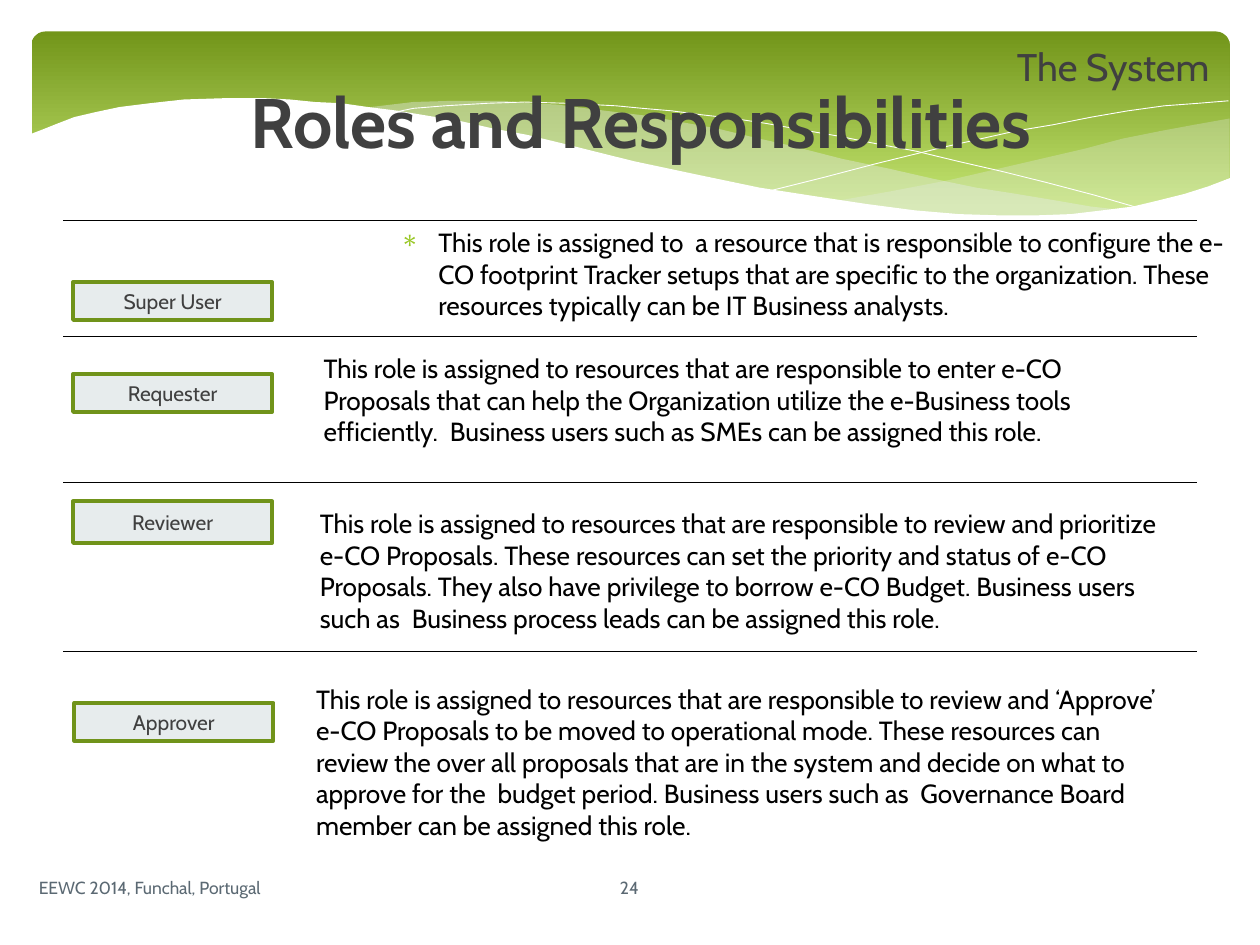
from dataclasses import dataclass

from lxml import etree
from pptx import Presentation
from pptx.dml.color import RGBColor
from pptx.enum.shapes import MSO_CONNECTOR, MSO_SHAPE
from pptx.enum.text import MSO_ANCHOR, PP_ALIGN
from pptx.oxml.ns import qn
from pptx.util import Inches, Pt

STRAIGHT = MSO_CONNECTOR.STRAIGHT
RECT, ROUNDED = MSO_SHAPE.RECTANGLE, MSO_SHAPE.ROUNDED_RECTANGLE
TOP, MIDDLE, BOTTOM = MSO_ANCHOR.TOP, MSO_ANCHOR.MIDDLE, MSO_ANCHOR.BOTTOM
LEFT, CENTER = PP_ALIGN.LEFT, PP_ALIGN.CENTER
FONT = "Cabin"
COLORS = {
    "band_top": "72951A", "band_bottom": "C5E672", "mist": "E7ECED",
    "white": "FFFFFF", "black": "000000", "dark": "404040",
    "border": "70931A", "footer": "5B6973", "bullet": "98C723",
}
Points = list[tuple[float, float]]


@dataclass
class Label:
    text: str
    box: tuple[float, float, float, float]
    size: int
    color: str = "dark"
    align: PP_ALIGN = CENTER
    anchor: MSO_ANCHOR = MIDDLE
    bold: bool = False


@dataclass
class Role:
    name: str
    box: tuple[float, float, float, float]
    text: str
    text_box: tuple[float, float, float, float]
    bulleted: bool = False


@dataclass
class Wave:
    points: Points
    fill: str | None = None
    alpha: int = 100


RIGHT_WAVE: Points = [
    (9.76, 0.94), (9.48, 0.99), (9.21, 1.04), (8.91, 1.1), (8.61, 1.18),
    (8.05, 1.31), (7.53, 1.43), (7.06, 1.52), (6.61, 1.6), (6.91, 1.64),
    (7.19, 1.67), (7.45, 1.69), (7.69, 1.71), (7.92, 1.72), (8.24, 1.72),
    (8.54, 1.7), (8.81, 1.67), (9.05, 1.63), (9.28, 1.58), (9.49, 1.52),
    (9.76, 1.41),
]
MIDDLE_WAVE: Points = [
    (8.93, 1.67), (8.66, 1.64), (8.37, 1.59), (8.07, 1.54), (7.75, 1.49),
    (7.41, 1.42), (7.06, 1.34), (6.68, 1.26), (6.29, 1.16), (5.98, 1.09),
    (5.69, 1.02), (5.41, 0.97), (5.14, 0.92), (4.89, 0.89), (4.65, 0.86),
    (4.42, 0.83), (4.2, 0.82), (3.99, 0.8), (3.61, 0.8), (3.28, 0.81),
    (2.86, 0.86), (3.23, 0.9), (3.62, 0.97), (4.04, 1.06), (4.49, 1.16),
    (4.91, 1.26), (5.3, 1.35), (5.66, 1.43), (6.01, 1.5), (6.34, 1.56),
    (6.65, 1.61), (6.95, 1.65), (7.22, 1.68), (7.48, 1.7), (7.73, 1.72),
    (7.96, 1.73), (8.28, 1.73), (8.57, 1.71), (8.76, 1.69),
]
FALLING_LINE: Points = [
    (3.09, 0.9), (3.28, 0.86), (3.53, 0.84), (3.87, 0.82), (4.16, 0.81),
    (4.5, 0.82), (4.89, 0.84), (5.1, 0.86), (5.33, 0.88), (5.56, 0.91),
    (5.82, 0.94), (6.08, 0.98), (6.36, 1.03), (6.65, 1.08), (6.95, 1.14),
    (7.27, 1.2), (7.6, 1.28), (7.95, 1.36), (8.31, 1.45), (8.69, 1.55),
    (9.07, 1.66),
]
RISING_LINE: Points = [
    (6.13, 1.51), (6.53, 1.41), (6.95, 1.3), (7.48, 1.17), (8.06, 1.04),
    (8.36, 0.99), (8.66, 0.93), (8.95, 0.88), (9.24, 0.84), (9.51, 0.82),
    (9.75, 0.8),
]
LOWER_EDGE: Points = [
    (9.77, 1.41), (9.59, 1.48), (9.4, 1.54), (9.2, 1.59), (8.99, 1.64),
    (8.75, 1.67), (8.5, 1.7), (8.23, 1.71), (7.93, 1.71), (7.61, 1.7),
    (7.26, 1.67), (6.88, 1.62), (6.48, 1.56), (6.03, 1.49), (5.55, 1.39),
    (5.03, 1.28), (4.47, 1.14), (4.18, 1.07), (3.91, 1.02), (3.65, 0.96),
    (3.4, 0.92), (3.16, 0.88), (2.92, 0.85), (2.71, 0.82), (2.5, 0.81),
    (2.3, 0.79), (2.11, 0.78), (1.77, 0.78), (1.46, 0.79), (1.19, 0.82),
    (0.95, 0.85), (0.76, 0.89), (0.59, 0.93), (0.46, 0.98), (0.36, 1.02),
    (0.23, 1.07), (0.23, 2.24), (9.77, 2.24),
]
WAVES = [
    Wave(RIGHT_WAVE, "mist", 29), Wave(MIDDLE_WAVE, "mist", 40),
    Wave(FALLING_LINE), Wave(RISING_LINE), Wave(LOWER_EDGE, "white"),
]
DIVIDERS = [1.75, 2.67, 3.83, 5.17]
LABELS = [
    Label("Roles and Responsibilities", (1.25, 0.67, 7.68, 0.67), 40, anchor=BOTTOM, bold=True),
    Label("The System", (7.92, 0.33, 1.83, 0.39), 22),
    Label("EEWC 2014, Funchal, Portugal", (0.21, 6.84, 4.14, 0.4), 10, "footer", LEFT),
    Label("24", (4.36, 6.84, 1.27, 0.4), 10, "footer"),
]
ROLES = [
    Role("Super User", (0.58, 2.24, 1.58, 0.3),
         "This role is assigned to  a resource that is responsible to configure the e-CO footprint "
         "Tracker setups that are specific to the organization. These resources typically can be "
         "IT Business analysts.", (3.08, 1.75, 6.92, 0.92), True),
    Role("Requester", (0.58, 2.97, 1.58, 0.3),
         "This role is assigned to resources that are responsible to enter e-CO Proposals that can "
         "help the Organization utilize the e-Business tools efficiently.  Business users such as "
         "SMEs can be assigned this role.", (2.47, 2.75, 6.92, 1.08)),
    Role("Reviewer", (0.58, 3.98, 1.58, 0.33),
         "This role is assigned to resources that are responsible to review and prioritize e-CO "
         "Proposals. These resources can set the priority and status of e-CO Proposals. They also "
         "have privilege to borrow e-CO Budget. Business users such as  Business process leads can "
         "be assigned this role.", (2.44, 3.98, 6.92, 1.28)),
    Role("Approver", (0.59, 5.58, 1.58, 0.3),
         "This role is assigned to resources that are responsible to review and ‘Approve’ e-CO "
         "Proposals to be moved to operational mode. These resources can review the over all "
         "proposals that are in the system and decide on what to approve for the  budget period. "
         "Business users such as  Governance Board member can be assigned this role.",
         (2.41, 5.37, 6.92, 1.54)),
]


def rgb(name: str) -> RGBColor:
    return RGBColor.from_string(COLORS[name])


def write(sp, label: Label):
    tf = sp.text_frame
    tf.word_wrap = True
    tf.vertical_anchor = label.anchor
    tf.text = label.text
    p = tf.paragraphs[0]
    p.alignment = label.align
    font = p.runs[0].font
    font.name, font.size, font.bold = FONT, Pt(label.size), label.bold
    font.color.rgb = rgb(label.color)
    return p


def add_label(s, label: Label):
    return write(s.shapes.add_textbox(*map(Inches, label.box)), label)


def add_band(s) -> None:
    sp = s.shapes.add_shape(ROUNDED, Inches(0.25), Inches(0.25), Inches(9.51), Inches(1.56))
    sp.adjustments[0] = 0.07
    sp.shadow.inherit = False
    sp.line.fill.background()
    sp.fill.gradient()
    sp.fill.gradient_angle = 270
    for stop, color, position in zip(sp.fill.gradient_stops, ("band_top", "band_bottom"), (0, 0.9)):
        stop.color.rgb = rgb(color)
        stop.position = position


def add_wave(s, wave: Wave) -> None:
    points = [(Inches(x), Inches(y)) for x, y in wave.points]
    builder = s.shapes.build_freeform(*points[0])
    builder.add_line_segments(points[1:], close=wave.fill is not None)
    sp = builder.convert_to_shape()
    sp.shadow.inherit = False
    if wave.fill is None:
        sp.fill.background()
        sp.line.color.rgb = rgb("white")
        sp.line.width = Pt(0.5)
        return
    sp.line.fill.background()
    sp.fill.solid()
    sp.fill.fore_color.rgb = rgb(wave.fill)
    if wave.alpha < 100:
        color = sp.fill._xPr.find(qn("a:solidFill"))[0]
        etree.SubElement(color, qn("a:alpha"), val=str(wave.alpha * 1000))


def add_divider(s, y: float) -> None:
    line = s.shapes.add_connector(STRAIGHT, Inches(0.5), Inches(y), Inches(9.5), Inches(y))
    line.line.color.rgb = rgb("black")
    line.line.width = Pt(0.75)
    etree.SubElement(line._element.spPr, qn("a:effectLst"))


def add_role(s, role: Role) -> None:
    sp = s.shapes.add_shape(RECT, *map(Inches, role.box))
    sp.shadow.inherit = False
    sp.fill.solid()
    sp.fill.fore_color.rgb = rgb("mist")
    sp.line.color.rgb = rgb("border")
    sp.line.width = Pt(2.25)
    write(sp, Label(role.name, role.box, 12))
    p = add_label(s, Label(role.text, role.text_box, 15, "black", LEFT, TOP))
    p.space_before = Pt(3)
    if role.bulleted:
        pPr = p._p.get_or_add_pPr()
        pPr.set("marL", str(Inches(0.3)))
        pPr.set("indent", str(Inches(-0.3)))
        color = etree.SubElement(pPr, qn("a:buClr"))
        etree.SubElement(color, qn("a:srgbClr"), val=COLORS["bullet"])
        etree.SubElement(pPr, qn("a:buChar"), char="∗")


def main() -> None:
    prs = Presentation()
    prs.slide_width, prs.slide_height = Inches(10), Inches(7.5)
    s = prs.slides.add_slide(prs.slide_layouts[6])
    add_band(s)
    for wave in WAVES:
        add_wave(s, wave)
    for y in DIVIDERS:
        add_divider(s, y)
    for role in ROLES:
        add_role(s, role)
    for label in LABELS:
        add_label(s, label)
    prs.save("out.pptx")


if __name__ == "__main__":
    main()
